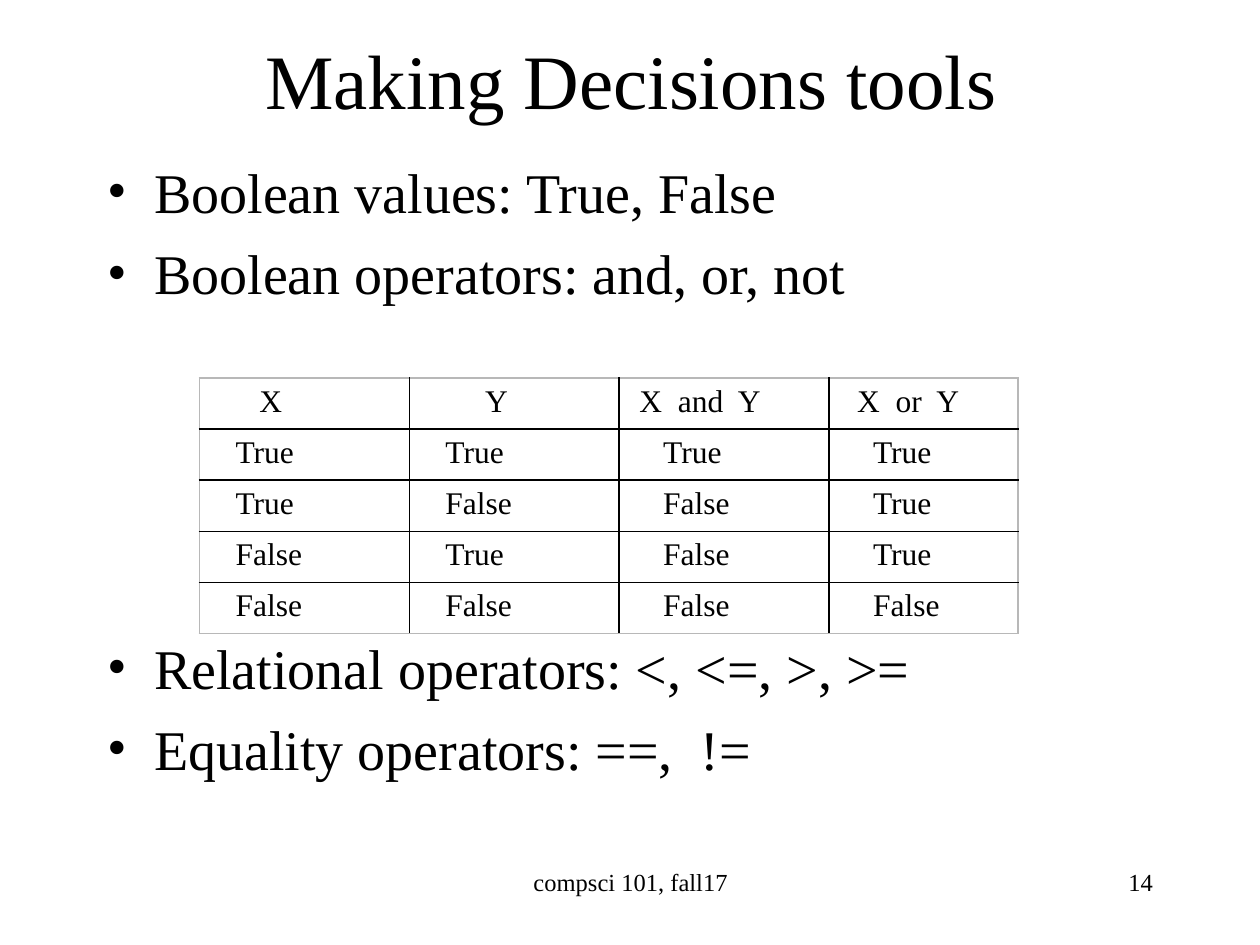
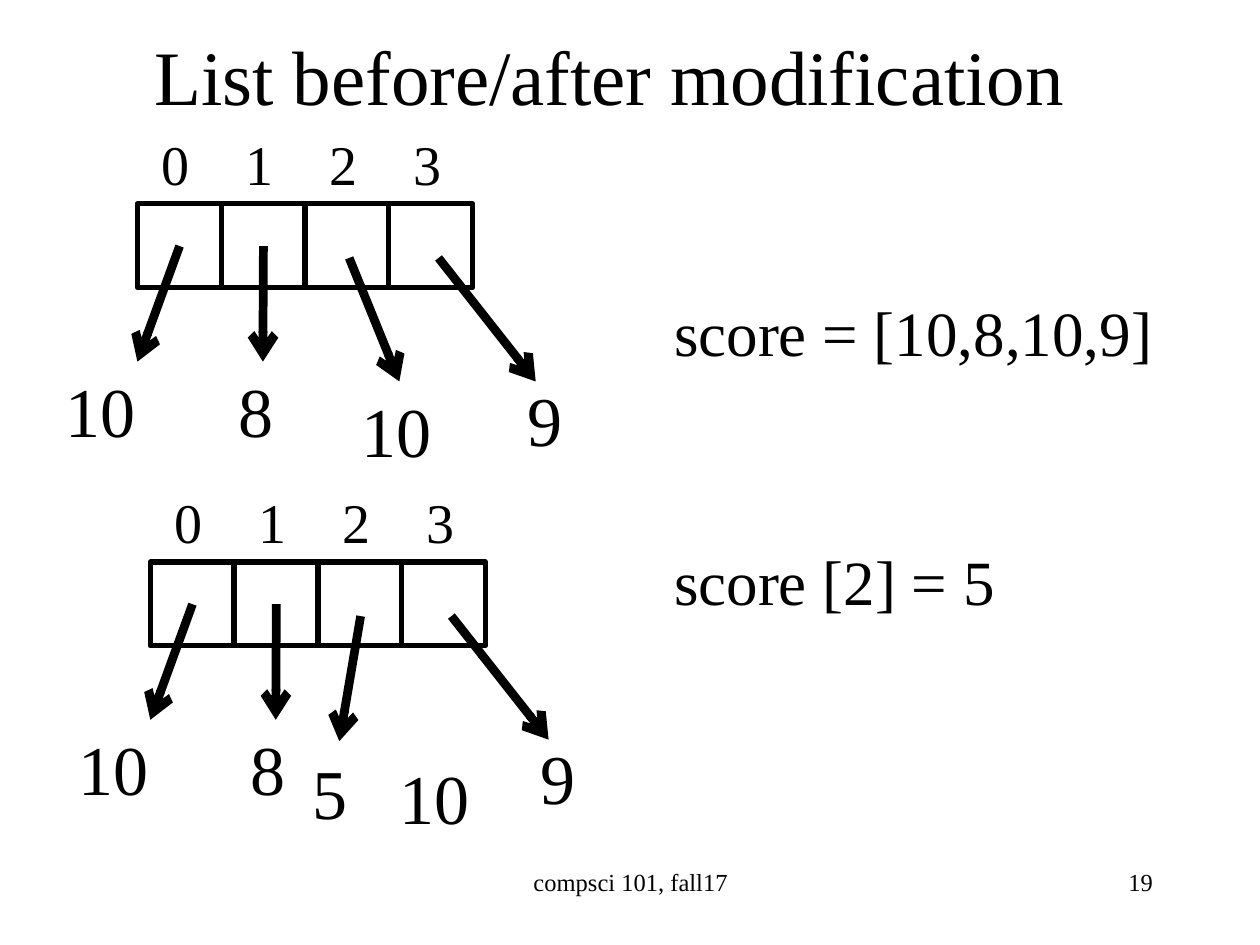
from lxml import etree
from pptx import Presentation
from pptx.dml.color import RGBColor
from pptx.enum.shapes import MSO_CONNECTOR, MSO_SHAPE
from pptx.enum.text import MSO_ANCHOR, MSO_AUTO_SIZE, PP_ALIGN
from pptx.oxml.ns import qn
from pptx.util import Cm, Pt

LEFT, CENTER, RIGHT = PP_ALIGN.LEFT, PP_ALIGN.CENTER, PP_ALIGN.RIGHT
TOP, MIDDLE = MSO_ANCHOR.TOP, MSO_ANCHOR.MIDDLE
NO_FIT = MSO_AUTO_SIZE.NONE
RECT, STRAIGHT = MSO_SHAPE.RECTANGLE, MSO_CONNECTOR.STRAIGHT
BLACK = RGBColor(0, 0, 0)
GRAY = RGBColor(0xB8, 0xB8, 0xB8)
FONT = "Times New Roman"

FOOT = "compsci 101, fall17"
TOOLS = {
    "title": "Making Decisions tools",
    "box": (1.93, 0, 21.59, 3.18),
    "page": "14",
}
BULLETS = [
    ("Boolean values: True, False", 0),
    ("Boolean operators: and, or, not", 8),
    ("Relational operators: <, <=, >, >=", 187),
    ("Equality operators: ==,  !=", 8),
]
HEADS = ["X", "Y", "X  and  Y", "X  or  Y"]
TRUTH = [(x, y, x and y, x or y) for x in (True, False) for y in (True, False)]
WIDTHS = [4.23, 4.23, 4.23, 3.81]
HEAD_PADS = [6, 8, 1, 2]
BODY_PADS = [3, 3, 4, 4]
ROW = 1.03
SPACE = 0.16

LISTS = {
    "title": "List before/after modification",
    "box": (1.5, 0.58, 21.59, 1.85),
    "page": "19",
}
CODE = [("score = [10,8,10,9]", 5.79), ("score [2] = 5", 10.82)]
CELL = 1.69
COUNT = 4
SAME_ARROWS = [
    ((0.85, 0.85), (0, 3.18)),
    ((2.54, 0.85), (2.53, 3.18)),
    ((6.07, 1.09), (8.03, 3.58)),
]
SAME_VALUES = [("10", -1.7, 3.18), ("8", 1.78, 3.18), ("9", 7.62, 3.35)]
ARRAYS = [
    {
        "at": (2.77, 4.11),
        "arrow": ((4.27, 1.09), (5.28, 3.58)),
        "values": [("10", 4.27, 3.58)],
    },
    {
        "at": (3.03, 11.33),
        "arrow": ((4.24, 1.09), (3.81, 3.61)),
        "values": [("5", 3.02, 3.66), ("10", 4.78, 3.76)],
    },
]


def write(frame, text, size=18, align=LEFT, anchor=TOP, gap=0, first=True):
    frame.word_wrap = True
    frame.vertical_anchor = anchor
    para = frame.paragraphs[0] if first else frame.add_paragraph()
    para.alignment = align
    para.space_before = Pt(gap)
    run = para.add_run()
    run.text = text
    run.font.name = FONT
    run.font.size = Pt(size)
    run.font.bold = False
    run.font.color.rgb = BLACK
    return para


def add_box(slide, box):
    return slide.shapes.add_textbox(*map(Cm, box)).text_frame


def add_page(deck, page):
    slide = deck.slides.add_slide(deck.slide_layouts[5])
    title = slide.shapes.title
    title.left, title.top, title.width, title.height = map(Cm, page["box"])
    title.text_frame.auto_size = NO_FIT
    write(title.text_frame, page["title"], size=44, align=CENTER, anchor=MIDDLE)
    write(add_box(slide, (8.69, 17.35, 8.05, 1.27)), FOOT, size=14, align=CENTER)
    write(add_box(slide, (18.21, 17.35, 5.28, 1.27)), page["page"], size=14, align=RIGHT)
    return slide


def add_mark(para):
    props = para._p.get_or_add_pPr()
    props.set("marL", str(Cm(0.95)))
    props.set("indent", str(-Cm(0.95)))
    etree.SubElement(props, qn("a:buFont"), typeface=FONT)
    etree.SubElement(props, qn("a:buChar"), char="•")


def add_edges(cell, edges):
    props = cell._tc.get_or_add_tcPr()
    for spot, (side, color) in enumerate(edges.items()):
        line = etree.Element(qn("a:ln" + side), w=str(Pt(1)))
        fill = etree.SubElement(line, qn("a:solidFill"))
        etree.SubElement(fill, qn("a:srgbClr"), val=str(color))
        props.insert(spot, line)


def add_truth(slide):
    rows = [HEADS] + [[str(value) for value in row] for row in TRUTH]
    size = len(rows), len(HEADS)
    box = 4.02, 7.62, sum(WIDTHS), ROW * len(rows)
    table = slide.shapes.add_table(*size, *map(Cm, box)).table
    table.first_row = table.horz_banding = False
    for col, width in zip(table.columns, WIDTHS):
        col.width = Cm(width)
    for r, row in enumerate(rows):
        table.rows[r].height = Cm(ROW)
        pads = BODY_PADS if r else HEAD_PADS
        for c, text in enumerate(row):
            cell = table.cell(r, c)
            cell.fill.background()
            cell.margin_left = Cm(0.25 + SPACE * pads[c])
            write(cell.text_frame, text)
            add_edges(cell, {
                "L": BLACK if c else GRAY,
                "R": BLACK if c < size[1] - 1 else GRAY,
                "T": BLACK if r else GRAY,
                "B": BLACK if r < size[0] - 1 else GRAY,
            })


def add_arrow(slide, start, end):
    arrow = slide.shapes.add_connector(STRAIGHT, *map(Cm, start + end))
    arrow.line.color.rgb = BLACK
    arrow.line.width = Pt(5)
    etree.SubElement(arrow.line._get_or_add_ln(), qn("a:tailEnd"), type="arrow")
    etree.SubElement(arrow._element.spPr, qn("a:effectLst"))


def add_array(slide, array):
    left, top = array["at"]
    for i in range(COUNT):
        x = left + i * CELL
        cell = slide.shapes.add_shape(RECT, *map(Cm, (x, top, CELL, CELL)))
        cell.shadow.inherit = False
        cell.fill.background()
        cell.line.color.rgb = BLACK
        cell.line.width = Pt(3)
        write(add_box(slide, (x - 0.07, top - 1.63, CELL, 1.63)), str(i), size=32, align=CENTER)
    for ends in SAME_ARROWS + [array["arrow"]]:
        add_arrow(slide, *[(left + x, top + y) for x, y in ends])
    for text, x, y in SAME_VALUES + array["values"]:
        width = 1.47 if len(text) == 1 else 2.01
        write(add_box(slide, (left + x, top + y, width, 1.96)), text, size=40)


def main():
    deck = Presentation()
    deck.slide_width, deck.slide_height = Cm(25.4), Cm(19.05)

    slide = add_page(deck, TOOLS)
    body = add_box(slide, (1.91, 3.05, 21.59, 14.61))
    for i, (text, gap) in enumerate(BULLETS):
        add_mark(write(body, text, size=32, gap=gap, first=i == 0))
    add_truth(slide)

    slide = add_page(deck, LISTS)
    for text, top in CODE:
        write(add_box(slide, (13.34, top, 10.59, 1.8)), text, size=36)
    for array in ARRAYS:
        add_array(slide, array)

    deck.save("out.pptx")


if __name__ == "__main__":
    main()
